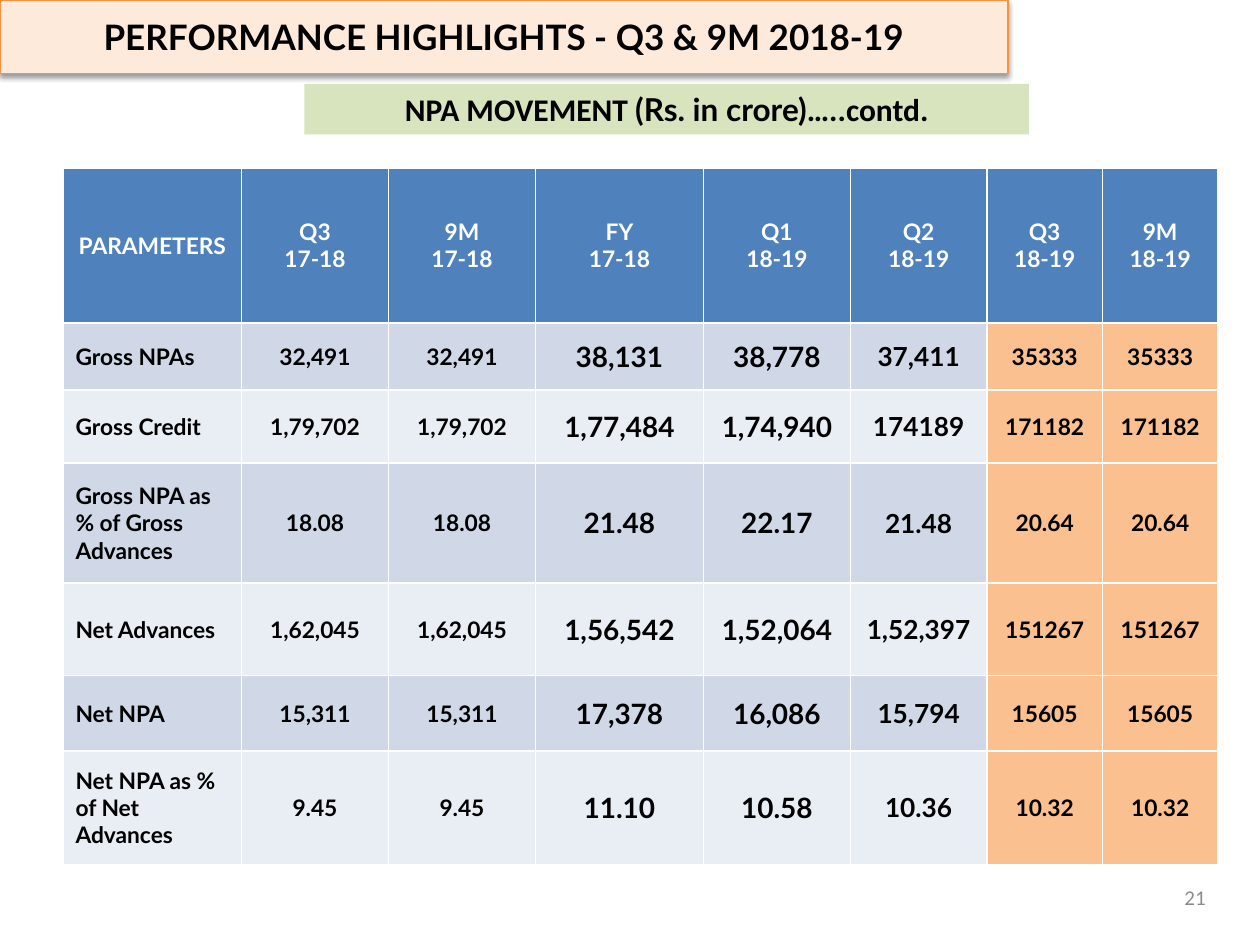
import pptx
import pptx.dml.color
import pptx.enum.shapes
import pptx.enum.text
import pptx.oxml.ns
import pptx.util
from lxml import etree

TITLE = "PERFORMANCE HIGHLIGHTS - Q3 & 9M 2018-19"
SUBTITLE = [("NPA MOVEMENT ", "Calibri"), ("(Rs. in crore)", "Lato"), ("…..contd.", "Calibri")]
PAGE_NUMBER = "21"
HEADER = ["PARAMETERS", "Q3\n17-18", "9M\n17-18", "FY\n17-18", "Q1\n18-19",
          "Q2\n18-19", "Q3\n18-19", "9M\n18-19"]
ROWS = [
    ["Gross NPAs", "32,491", "32,491", "38,131", "38,778", "37,411", "35333", "35333"],
    ["Gross Credit", "1,79,702", "1,79,702", "1,77,484", "1,74,940", "174189", "171182", "171182"],
    ["Gross NPA as % of Gross Advances", "18.08", "18.08", "21.48", "22.17", "21.48", "20.64", "20.64"],
    ["Net Advances", "1,62,045", "1,62,045", "1,56,542", "1,52,064", "1,52,397", "151267", "151267"],
    ["Net NPA", "15,311", "15,311", "17,378", "16,086", "15,794", "15605", "15605"],
    ["Net NPA as % of Net Advances", "9.45", "9.45", "11.10", "10.58", "10.36", "10.32", "10.32"],
]

# The page is a grid of 120 columns by 90 rows, twelve to the inch.
UNIT = 1 / 12
PAGE = (120, 90)
TITLE_AREA = (0, 0, 96, 7)
SUBTITLE_AREA = (29, 8, 69, 4.8)
NUMBER_AREA = (88, 83, 28, 4.8)
TABLE_CORNER = (6, 16)
COLUMN_UNITS = [17, 14, 14, 16, 14, 13, 11, 11]
ROW_UNITS = [14.76, 6.36, 7, 11.4, 8.84, 7.16, 10.8]

THEME = {
    "font": "Lato", "number_font": "Calibri",
    "text": "000000", "white": "FFFFFF", "muted": "8C8C8C",
    "title_fill": "FDEADA", "title_line": "F69240", "subtitle_fill": "D7E4BD",
    "header_fill": "4F81BD", "bands": ["D0D8E8", "E9EDF4"], "current_fill": "FAC090",
    "title_size": 20, "subtitle_size": 18, "number_size": 12, "header_size": 13,
    "column_sizes": [13, 13, 13, 16, 16, 15, 13, 13],
}
CURRENT_COLUMNS = (6, 7)

ALIGN = pptx.enum.text.PP_ALIGN
MIDDLE = pptx.enum.text.MSO_ANCHOR.MIDDLE
TOP = pptx.enum.text.MSO_ANCHOR.TOP


def grid(units):
    return pptx.util.Inches(units * UNIT)


def rgb(value):
    return pptx.dml.color.RGBColor.from_string(value)


def paint(fill, colour):
    fill.solid()
    fill.fore_color.rgb = rgb(colour)


def add_element(parent, tag, **attributes):
    return etree.SubElement(parent, pptx.oxml.ns.qn(tag), attributes)


def write(frame, spans, size, colour, align, bold=True):
    """Fill a text frame with (text, font) spans; a newline starts a new paragraph."""
    para = frame.paragraphs[0]
    para.alignment = align
    style = {"size": pptx.util.Pt(size), "bold": bold}
    for text, font in spans:
        for index, line in enumerate(text.split("\n")):
            if index:
                para = frame.add_paragraph()
                para.alignment = align
            span = para.add_run()
            span.text = line
            for name, value in {**style, "name": font}.items():
                setattr(span.font, name, value)
            span.font.color.rgb = rgb(colour)


def add_panel(page, area, fill, anchor, line=None):
    box = page.shapes.add_shape(pptx.enum.shapes.MSO_SHAPE.RECTANGLE, *map(grid, area))
    box.shadow.inherit = False
    paint(box.fill, fill)
    if line:
        box.line.color.rgb = rgb(line)
        box.line.width = pptx.util.Pt(0.75)
    else:
        box.line.fill.background()
    box.text_frame.word_wrap = True
    box.text_frame.vertical_anchor = anchor
    return box


def add_drop_shadow(box):
    effects = box._element.spPr.find(pptx.oxml.ns.qn("a:effectLst"))
    shadow = add_element(effects, "a:outerShdw", blurRad=str(pptx.util.Pt(3.1)),
                         dist=str(pptx.util.Pt(1.6)), dir="5400000", rotWithShape="0")
    colour = add_element(shadow, "a:srgbClr", val=THEME["text"])
    add_element(colour, "a:alpha", val="38000")


def add_borders(cell):
    properties = cell._tc.get_or_add_tcPr()
    for side in ("a:lnL", "a:lnR", "a:lnT", "a:lnB"):
        line = add_element(properties, side, w=str(pptx.util.Pt(1)))
        add_element(add_element(line, "a:solidFill"), "a:srgbClr", val=THEME["white"])


def cell_format(row, column):
    """Return fill, type size, text colour and alignment of one table cell."""
    if row == 0:
        return THEME["header_fill"], THEME["header_size"], THEME["white"], ALIGN.CENTER
    fill = THEME["current_fill"] if column in CURRENT_COLUMNS else THEME["bands"][(row - 1) % 2]
    align = ALIGN.CENTER if column else ALIGN.LEFT
    return fill, THEME["column_sizes"][column], THEME["text"], align


def add_npa_table(page):
    content = [HEADER] + ROWS
    size = (sum(COLUMN_UNITS), sum(ROW_UNITS))
    table = page.shapes.add_table(len(content), len(HEADER),
                                  *map(grid, TABLE_CORNER + size)).table
    for column, units in zip(table.columns, COLUMN_UNITS):
        column.width = grid(units)
    for row, units in zip(table.rows, ROW_UNITS):
        row.height = grid(units)
    for row, texts in enumerate(content):
        for column, text in enumerate(texts):
            cell = table.cell(row, column)
            fill, size, colour, align = cell_format(row, column)
            cell.vertical_anchor = MIDDLE
            add_borders(cell)
            paint(cell.fill, fill)
            write(cell.text_frame, [(text, THEME["font"])], size, colour, align)


def main():
    deck = pptx.Presentation()
    deck.slide_width, deck.slide_height = map(grid, PAGE)
    page = deck.slides.add_slide(deck.slide_layouts[6])

    subtitle = add_panel(page, SUBTITLE_AREA, THEME["subtitle_fill"], TOP)
    write(subtitle.text_frame, SUBTITLE, THEME["subtitle_size"], THEME["text"], ALIGN.CENTER)

    number = page.shapes.add_textbox(*map(grid, NUMBER_AREA)).text_frame
    number.word_wrap = True
    number.vertical_anchor = MIDDLE
    write(number, [(PAGE_NUMBER, THEME["number_font"])], THEME["number_size"],
          THEME["muted"], ALIGN.RIGHT, bold=False)

    add_npa_table(page)

    title = add_panel(page, TITLE_AREA, THEME["title_fill"], MIDDLE, THEME["title_line"])
    add_drop_shadow(title)
    write(title.text_frame, [(TITLE, THEME["font"])], THEME["title_size"],
          THEME["text"], ALIGN.CENTER)

    deck.save("out.pptx")


if __name__ == "__main__":
    main()
